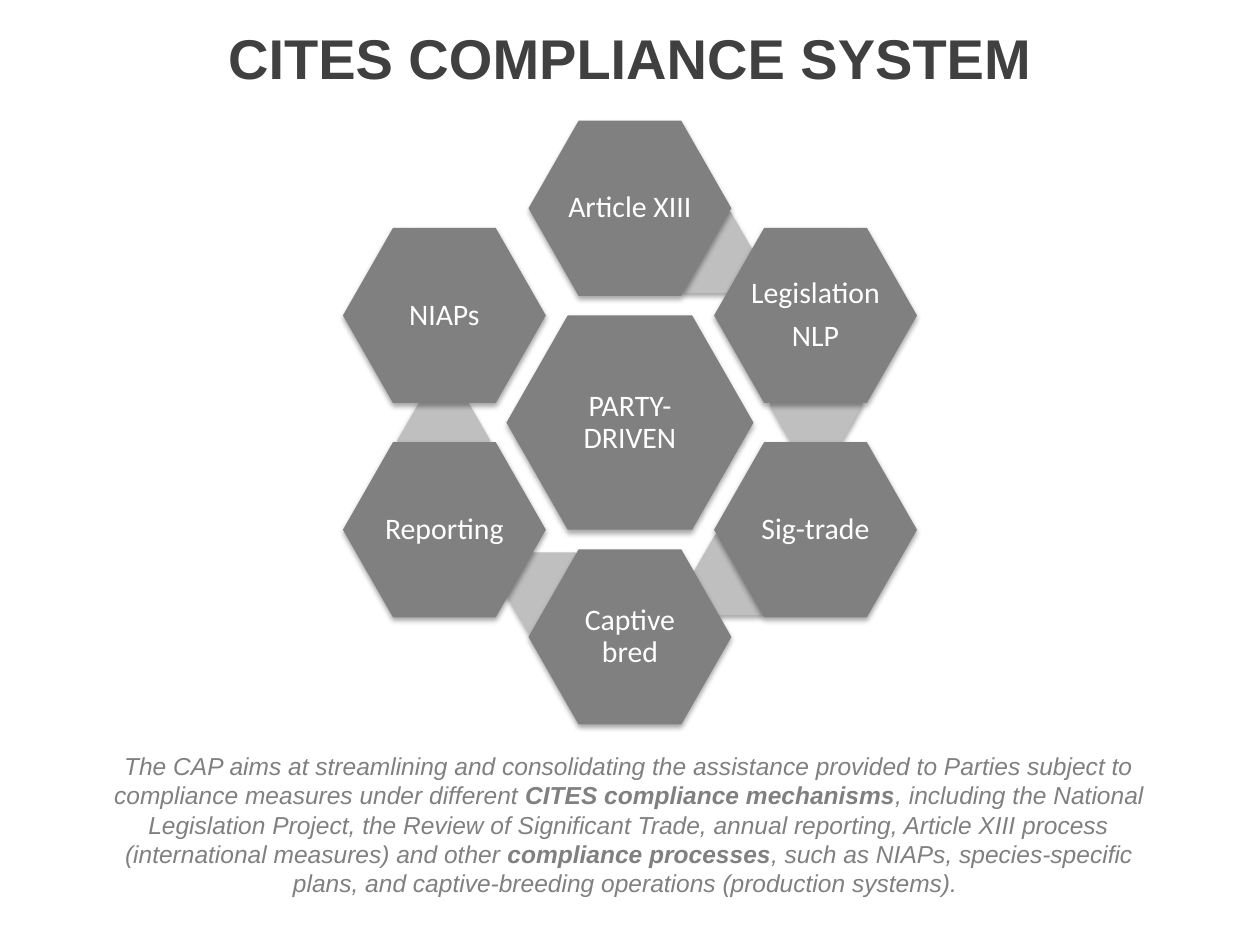
import math
from dataclasses import dataclass
from lxml import etree
from pptx import Presentation
from pptx import util as u
from pptx.dml import color
from pptx.enum import shapes, text
from pptx.oxml import ns


@dataclass(frozen=True)
class Theme:
    title: str = "404040"
    dark: str = "808080"
    light: str = "BFBFBF"
    white: str = "FFFFFF"
    shadow: str = "000000"
    title_size: int = 32
    node_size: int = 17
    body_size: int = 14
    head_font: str = "Arial"
    node_font: str = "Calibri"


theme = Theme()
Cm, Pt, RGB = u.Cm, u.Pt, color.RGBColor.from_string


def add_run(p, words, font, size, colour, bold=False, italic=False):
    r = p.add_run()
    r.text = words
    r.font.name, r.font.size = font, Pt(size)
    r.font.color.rgb = RGB(colour)
    r.font.bold, r.font.italic = bold, italic


def add_hexagon(group, angle, radius, width, height, adj, fill, lines=()):
    x = 12.7 + radius * math.sin(math.radians(angle))
    y = 8.52 - radius * math.cos(math.radians(angle))
    sp = group.shapes.add_shape(shapes.MSO_SHAPE.HEXAGON, Cm(x - width / 2),
                                Cm(y - height / 2), Cm(width), Cm(height))
    sp.adjustments[0] = adj
    sp.fill.solid()
    sp.fill.fore_color.rgb = RGB(fill)
    sp.line.fill.background()
    sp.shadow.inherit = False
    effects = sp._element.spPr.find(ns.qn("a:effectLst"))
    shadow = etree.SubElement(effects, ns.qn("a:outerShdw"), blurRad=str(Pt(3.1)),
                              dist=str(Pt(1.8)), dir="5400000", rotWithShape="0")
    tint = etree.SubElement(shadow, ns.qn("a:srgbClr"), val=theme.shadow)
    etree.SubElement(tint, ns.qn("a:alpha"), val="35000")
    tf = sp.text_frame
    tf.word_wrap = True
    tf.vertical_anchor = text.MSO_ANCHOR.MIDDLE
    tf.margin_left = tf.margin_right = tf.margin_top = tf.margin_bottom = Cm(0.05)
    for i, line in enumerate(lines):
        p = tf.add_paragraph() if i else tf.paragraphs[0]
        p.alignment = text.PP_ALIGN.CENTER
        p.line_spacing = 0.9
        p.space_after = Pt(6)
        add_run(p, line, theme.node_font, theme.node_size, theme.white)


prs = Presentation()
prs.slide_width, prs.slide_height = Cm(25.4), Cm(19.05)
s = prs.slides.add_slide(prs.slide_layouts[5])

nodes = [["Article XIII"], ["Legislation", "NLP"], ["Sig-trade"],
         ["Captive bred"], ["Reporting"], ["NIAPs"]]
wheel = s.shapes.add_group_shape()
add_hexagon(wheel, 0, 0, 4.98, 4.32, 0.286, theme.dark, ["PARTY-DRIVEN"])
for i, lines in enumerate(nodes):
    angle = i * 360 / len(nodes)
    if i < len(nodes) - 1:
        add_hexagon(wheel, angle + 24.5, 3.77, 1.88, 1.63, 0.289, theme.light)
    add_hexagon(wheel, angle, 4.32, 4.09, 3.53, 0.286, theme.dark, lines)

title = s.shapes.title
title.left, title.top, title.width, title.height = Cm(1.7), Cm(0.25), Cm(22), Cm(1.8)
tf = title.text_frame
tf.auto_size = text.MSO_AUTO_SIZE.NONE
tf.vertical_anchor = text.MSO_ANCHOR.MIDDLE
p = tf.paragraphs[0]
p.alignment = text.PP_ALIGN.CENTER
add_run(p, "CITES COMPLIANCE SYSTEM", theme.head_font, theme.title_size, theme.title, bold=True)

summary = [
    ("The CAP aims at streamlining and consolidating the assistance provided to Parties "
     "subject to compliance measures under different ", False),
    ("CITES compliance mechanisms", True),
    (", including the National Legislation Project, the Review of Significant Trade, annual "
     "reporting, Article XIII process (international measures) and other ", False),
    ("compliance processes", True),
    (", such as NIAPs, species-specific plans, and captive-breeding operations "
     "(production systems). ", False),
]
tf = s.shapes.add_textbox(Cm(1.68), Cm(15.01), Cm(22), Cm(3.25)).text_frame
tf.word_wrap = True
tf.auto_size = text.MSO_AUTO_SIZE.SHAPE_TO_FIT_TEXT
p = tf.paragraphs[0]
p.alignment = text.PP_ALIGN.CENTER
for words, bold in summary:
    add_run(p, words, theme.head_font, theme.body_size, theme.dark, bold, italic=True)

prs.save("out.pptx")
